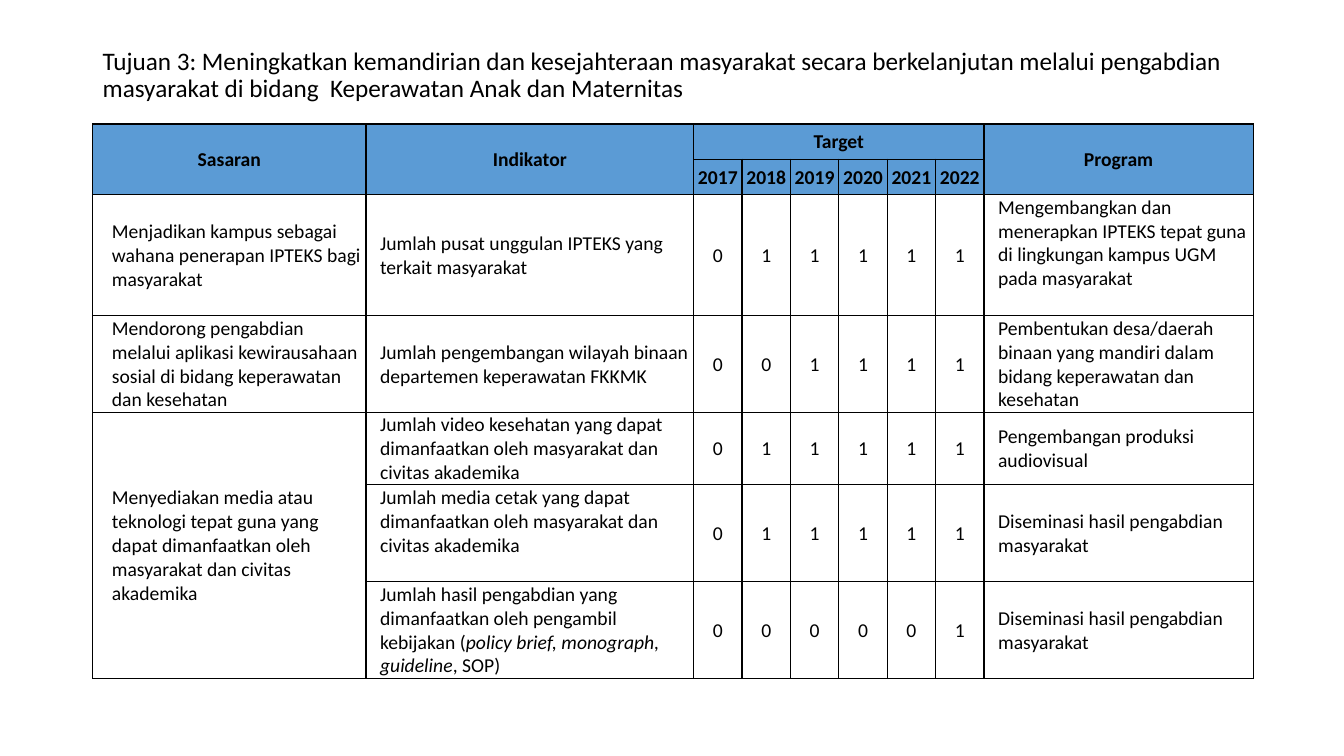
from lxml.etree import SubElement
from pptx import Presentation
from pptx.dml.color import RGBColor
from pptx.enum.text import MSO_ANCHOR, PP_ALIGN
from pptx.oxml.ns import qn
from pptx.util import Inches, Pt

TITLE = ("Tujuan 3: Meningkatkan kemandirian dan kesejahteraan masyarakat secara berkelanjutan "
         "melalui pengabdian masyarakat di bidang  Keperawatan Anak dan Maternitas")
YEARS = range(2017, 2023)
# Sasaran, Indikator, yearly targets, Program; * encloses italics, None continues the cell above
ROWS = [
    ("Menjadikan kampus sebagai wahana penerapan IPTEKS bagi masyarakat",
     "Jumlah pusat unggulan IPTEKS yang terkait masyarakat",
     (0, 1, 1, 1, 1, 1),
     "Mengembangkan dan menerapkan IPTEKS tepat guna di lingkungan kampus UGM pada masyarakat"),
    ("Mendorong pengabdian melalui aplikasi kewirausahaan sosial di bidang keperawatan dan kesehatan",
     "Jumlah pengembangan wilayah binaan departemen keperawatan FKKMK",
     (0, 0, 1, 1, 1, 1),
     "Pembentukan desa/daerah binaan yang mandiri dalam bidang keperawatan dan kesehatan"),
    ("Menyediakan media atau teknologi tepat guna yang dapat dimanfaatkan oleh masyarakat dan civitas akademika",
     "Jumlah video kesehatan yang dapat dimanfaatkan oleh masyarakat dan civitas akademika",
     (0, 1, 1, 1, 1, 1),
     "Pengembangan produksi audiovisual"),
    (None,
     "Jumlah media cetak yang dapat dimanfaatkan oleh masyarakat dan civitas akademika",
     (0, 1, 1, 1, 1, 1),
     "Diseminasi hasil pengabdian masyarakat"),
    (None,
     "Jumlah hasil pengabdian yang dimanfaatkan oleh pengambil kebijakan "
     "(*policy brief, monograph, guideline*, SOP)",
     (0, 0, 0, 0, 0, 1),
     "Diseminasi hasil pengabdian masyarakat"),
]
COL_WIDTHS = [2.71, 3.25] + [0.48] * len(YEARS) + [2.67]
ROW_HEIGHTS = [0.35, 0.35, 1.2, 0.96, 0.72, 0.96, 0.96]
PROGRAM = len(COL_WIDTHS) - 1
INDENTS = {0: 0.18, 1: 0.13, PROGRAM: 0.13}
MERGES = [(0, 0, 1, 0), (0, 1, 1, 1), (0, 2, 0, PROGRAM - 1),
          (0, PROGRAM, 1, PROGRAM), (4, 0, 6, 0)]
TOP_CELLS = {(2, PROGRAM), (5, 1)}
LEFT, TITLE_TOP, TABLE_TOP, WIDTH = 0.92, 0.4, 1.23, 11.5
THEME = {"font": "Calibri", "ink": RGBColor(0, 0, 0), "line": "000000",
         "header": RGBColor(0x5B, 0x9B, 0xD5), "title": 18, "body": 14}


def write(tf, text, size=THEME["body"], bold=False, align=PP_ALIGN.LEFT, indent=0, spacing=None):
    """Fill the first paragraph, setting parts between asterisks in italics."""
    p = tf.paragraphs[0]
    p.alignment = align
    if spacing:
        p.line_spacing = spacing
    if indent:
        p._p.get_or_add_pPr().set("marL", str(Inches(indent)))
    for i, part in enumerate(text.split("*")):
        r = p.add_run()
        r.text = part
        r.font.name, r.font.size, r.font.bold = THEME["font"], Pt(size), bold
        r.font.italic = i % 2 == 1
        r.font.color.rgb = THEME["ink"]


def add_borders(cell):
    props = cell._tc.get_or_add_tcPr()
    for pos, side in enumerate(("lnL", "lnR", "lnT", "lnB")):
        ln = props.makeelement(qn(f"a:{side}"), {"w": str(Pt(1))})
        fill = SubElement(ln, qn("a:solidFill"))
        SubElement(fill, qn("a:srgbClr"), val=THEME["line"])
        props.insert(pos, ln)


def add_title(s):
    tf = s.shapes.add_textbox(Inches(LEFT), Inches(TITLE_TOP), Inches(WIDTH), Inches(0.71)).text_frame
    tf.word_wrap = True
    tf.vertical_anchor = MSO_ANCHOR.MIDDLE
    write(tf, TITLE, size=THEME["title"], spacing=0.9)


def add_targets(s):
    blanks = [None] * (len(YEARS) - 1)
    grid = [["Sasaran", "Indikator", "Target", *blanks, "Program"],
            [None, None, *YEARS, None]]
    grid += [[goal, indicator, *targets, program] for goal, indicator, targets, program in ROWS]
    table = s.shapes.add_table(len(grid), len(COL_WIDTHS), Inches(LEFT), Inches(TABLE_TOP),
                               Inches(WIDTH), Inches(sum(ROW_HEIGHTS))).table
    table.first_row = table.horz_banding = False
    for column, width in zip(table.columns, COL_WIDTHS):
        column.width = Inches(width)
    for row, height in zip(table.rows, ROW_HEIGHTS):
        row.height = Inches(height)
    for top, left, bottom, right in MERGES:
        table.cell(top, left).merge(table.cell(bottom, right))

    for i, values in enumerate(grid):
        header = i < 2
        for j, value in enumerate(values):
            cell = table.cell(i, j)
            cell.margin_left = cell.margin_right = cell.margin_top = Inches(0.01)
            cell.margin_bottom = 0
            cell.vertical_anchor = MSO_ANCHOR.TOP if (i, j) in TOP_CELLS else MSO_ANCHOR.MIDDLE
            if header:
                cell.fill.solid()
                cell.fill.fore_color.rgb = THEME["header"]
            else:
                cell.fill.background()
            add_borders(cell)
            if value is not None:
                indent = 0 if header else INDENTS.get(j, 0)
                write(cell.text_frame, str(value), bold=header, indent=indent,
                      align=PP_ALIGN.LEFT if indent else PP_ALIGN.CENTER)


def main():
    prs = Presentation()
    prs.slide_width, prs.slide_height = Inches(13.33), Inches(7.5)
    s = prs.slides.add_slide(prs.slide_layouts[6])
    add_title(s)
    add_targets(s)
    prs.save("out.pptx")


if __name__ == "__main__":
    main()
